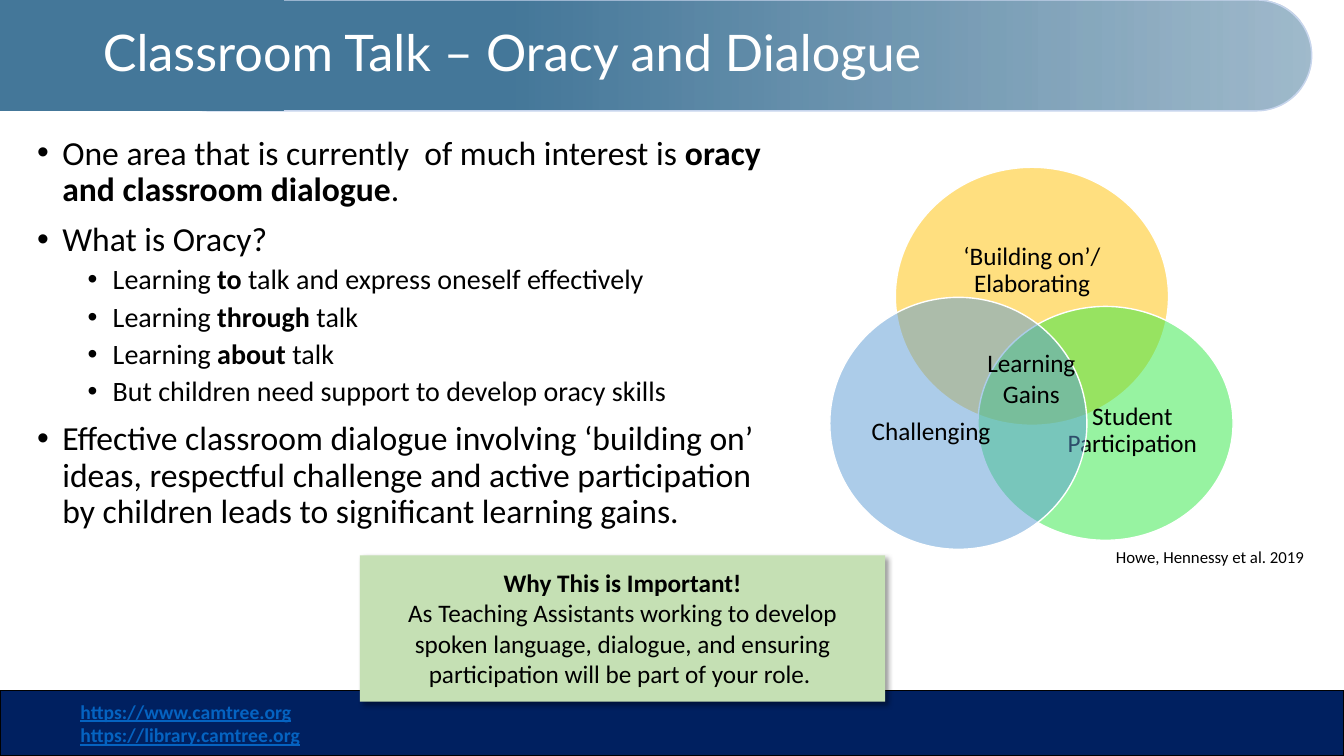
"""Build the Classroom Talk slide on oracy and dialogue."""
from lxml import etree
from pptx import Presentation
from pptx.dml.color import RGBColor
from pptx.enum.shapes import MSO_SHAPE
from pptx.enum.text import MSO_ANCHOR, MSO_AUTO_SIZE, PP_ALIGN
from pptx.oxml.ns import qn
from pptx.util import Inches, Pt

RECTANGLE, ROUNDED, OVAL = MSO_SHAPE.RECTANGLE, MSO_SHAPE.ROUNDED_RECTANGLE, MSO_SHAPE.OVAL
TOP, MIDDLE = MSO_ANCHOR.TOP, MSO_ANCHOR.MIDDLE
LEFT, CENTER = PP_ALIGN.LEFT, PP_ALIGN.CENTER

BLUE, NAVY, WHITE, BLACK = "447799", "002060", "FFFFFF", "000000"
TITLE = "Classroom Talk – Oracy and Dialogue"
TITLE_BOX = (0.92, 0, 11.5, 1.1)
LINKS = ["https://www.camtree.org", "https://library.camtree.org"]
BULLETS = [
    (0, ["One area that is currently  of much interest is ", "oracy and classroom dialogue", "."]),
    (0, ["What is Oracy?"]),
    (1, ["Learning ", "to", " talk and express oneself effectively"]),
    (1, ["Learning ", "through ", "talk"]),
    (1, ["Learning ", "about", " talk"]),
    (1, ["But children need support to develop oracy skills"]),
    (0, ["Effective classroom dialogue involving ‘building on’ ideas, respectful challenge "
         "and active participation by children leads to significant learning gains."]),
]
LEVELS = [
    {"size": 24, "before": 10, "indent": 0.25},
    {"size": 20, "before": 5, "indent": 0.75},
]
CIRCLES = [
    ("‘Building on’/ Elaborating", "FFC000", (8.88, 1.66, 2.71, 2.56), (9.24, 2.11, 1.99, 1.15)),
    ("Student Participation", "30E845", (9.7, 3.04, 2.53, 2.32), (10.47, 3.64, 1.52, 1.27)),
    ("Challenging", "5B9BD5", (8.23, 2.95, 2.55, 2.5), (8.47, 3.6, 1.53, 1.38)),
]
CALLOUT = [
    ["", "Why This is Important!"],
    ["As Teaching Assistants working to develop spoken language, dialogue, "
     "and ensuring participation will be part of your role. "],
]


def rgb(value):
    return RGBColor.from_string(value)


def set_alpha(color_element, percent):
    etree.SubElement(color_element, qn("a:alpha"), val=str(percent * 1000))


def add_shape(slide, kind, box, fill, line=None):
    shape = slide.shapes.add_shape(kind, *map(Inches, box))
    shape.shadow.inherit = False
    shape.fill.solid()
    shape.fill.fore_color.rgb = rgb(fill)
    if line:
        shape.line.color.rgb = rgb(line)
        shape.line.width = Pt(1)
    else:
        shape.line.fill.background()
    return shape


def format_frame(frame, margin=None, anchor=TOP, wrap=True):
    settings = {"word_wrap": wrap, "auto_size": MSO_AUTO_SIZE.NONE, "vertical_anchor": anchor}
    if margin is not None:
        for side in ("left", "right", "top", "bottom"):
            settings[f"margin_{side}"] = Inches(margin)
    for name, value in settings.items():
        setattr(frame, name, value)


def write_paragraph(paragraph, parts, size, color=BLACK, font="Calibri", align=LEFT, spacing=1.0,
                    **extra):
    """Write the parts as runs, with every second part in bold."""
    paragraph.alignment = align
    paragraph.line_spacing = spacing
    for index, part in enumerate(parts):
        if not part:
            continue
        run = paragraph.add_run()
        run.text = part
        settings = {"name": font, "size": Pt(size), "bold": index % 2 == 1, **extra}
        for name, value in settings.items():
            setattr(run.font, name, value)
        run.font.color.rgb = rgb(color)


def write_lines(frame, lines, size, **settings):
    for index, parts in enumerate(lines):
        paragraph = frame.add_paragraph() if index else frame.paragraphs[0]
        write_paragraph(paragraph, parts, size, **settings)


def add_text(slide, box, lines, size, margin=None, anchor=TOP, wrap=True, **settings):
    frame = slide.shapes.add_textbox(*map(Inches, box)).text_frame
    format_frame(frame, margin, anchor, wrap)
    write_lines(frame, lines, size, **settings)
    return frame


def add_banner(slide):
    banner = add_shape(slide, ROUNDED, (1.51, 0, 11.5, 1.1), BLUE, "C7D5ED")
    banner.adjustments[0] = 0.5
    banner.fill.gradient()
    banner.fill.gradient_angle = 0
    for stop, position in zip(banner.fill.gradient_stops, (0.3, 1)):
        stop.color.rgb = rgb(BLUE)
        stop.position = position
    set_alpha(banner.fill._xPr.findall(".//" + qn("a:srgbClr"))[1], 50)
    add_shape(slide, RECTANGLE, (0, 0, 2.81, 1.1), BLUE, BLUE)

    title = slide.shapes.title
    title.left, title.top, title.width, title.height = map(Inches, TITLE_BOX)
    format_frame(title.text_frame, anchor=MIDDLE)
    write_lines(title.text_frame, [[TITLE]], 36, color=WHITE, font="Lato", spacing=0.9)
    slide.shapes._spTree.append(title._element)


def add_bullets(slide):
    frame = add_text(slide, (0.27, 1.3, 7.6, 5.47), [], 24)
    for index, (level, parts) in enumerate(BULLETS):
        style = LEVELS[level]
        paragraph = frame.add_paragraph() if index else frame.paragraphs[0]
        paragraph.level = level
        write_paragraph(paragraph, parts, style["size"], spacing=0.9)
        paragraph.space_before = Pt(style["before"] if index else 0)
        properties = paragraph._p.get_or_add_pPr()
        properties.set("marL", str(Inches(style["indent"])))
        properties.set("indent", str(-Inches(0.25)))
        etree.SubElement(properties, qn("a:buFont"), typeface="Arial")
        etree.SubElement(properties, qn("a:buChar"), char="•")


def add_diagram(slide):
    for label, color, circle_box, label_box in CIRCLES:
        circle = add_shape(slide, OVAL, circle_box, color, WHITE)
        set_alpha(circle.fill._xPr.find(qn("a:solidFill"))[0], 50)
        add_text(slide, label_box, [[label]], 18, margin=0, anchor=MIDDLE, align=CENTER, spacing=0.9)
    add_text(slide, (9.68, 3.4, 1.1, 0.71), [["Learning Gains"]], 18, align=CENTER)
    add_text(slide, (10.97, 5.37, 2.09, 0.3), [["Howe, Hennessy et al. 2019"]], 12, wrap=False)


def add_callout(slide):
    callout = add_shape(slide, RECTANGLE, (3.57, 5.51, 5.21, 1.45), "C5E0B4")
    effects = callout._element.spPr.find(qn("a:effectLst"))
    shadow = etree.SubElement(effects, qn("a:outerShdw"), blurRad=str(Pt(4)), dist=str(Pt(3)),
                              dir=str(45 * 60000), algn="tl", rotWithShape="0")
    set_alpha(etree.SubElement(shadow, qn("a:srgbClr"), val=BLACK), 40)
    format_frame(callout.text_frame, margin=0.12)
    write_lines(callout.text_frame, CALLOUT, 18, align=CENTER)


def main():
    presentation = Presentation()
    presentation.slide_width, presentation.slide_height = Inches(13.33), Inches(7.5)
    slide = presentation.slides.add_slide(presentation.slide_layouts[5])
    add_shape(slide, RECTANGLE, (0, 6.85, 13.33, 0.65), NAVY, BLACK)
    add_text(slide, (0.7, 6.89, 3.34, 0.57), [["", link] for link in LINKS], 14,
             color="0563C1", underline=True)
    add_banner(slide)
    add_bullets(slide)
    add_diagram(slide)
    add_callout(slide)
    presentation.save("out.pptx")


if __name__ == "__main__":
    main()
